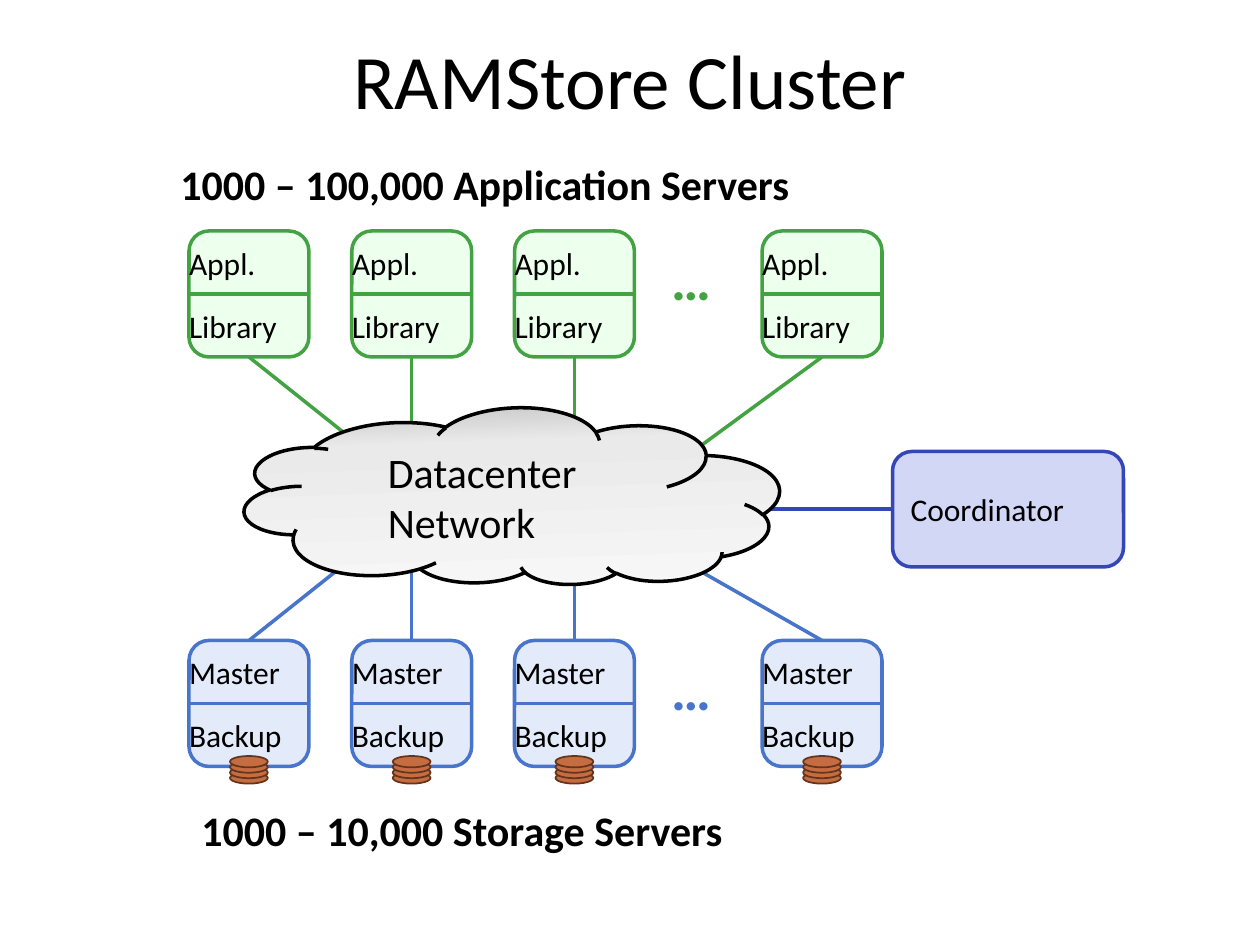
"""Build a slide showing a storage cluster joined by a datacenter network."""
from copy import deepcopy
from dataclasses import dataclass

from lxml import etree
from pptx import Presentation
from pptx.dml.color import RGBColor
from pptx.enum.shapes import MSO_CONNECTOR, MSO_SHAPE
from pptx.enum.text import MSO_ANCHOR, MSO_AUTO_SIZE, PP_ALIGN
from pptx.oxml.ns import qn
from pptx.util import Pt

ROUNDED, OVAL, CLOUD = MSO_SHAPE.ROUNDED_RECTANGLE, MSO_SHAPE.OVAL, MSO_SHAPE.CLOUD
STRAIGHT = MSO_CONNECTOR.STRAIGHT
MIDDLE, LEFT, CENTER = MSO_ANCHOR.MIDDLE, PP_ALIGN.LEFT, PP_ALIGN.CENTER
GROW = MSO_AUTO_SIZE.SHAPE_TO_FIT_TEXT
TOP_SIDE, LEFT_SIDE, BOTTOM_SIDE = 0, 1, 2

COLORS = {
    "text": "000000",
    "app_fill": "EDFFED", "app_line": "43A343",
    "storage_fill": "E3EAF9", "storage_line": "4974CB",
    "coordinator_fill": "D2D7F6", "coordinator_line": "3447B8",
    "disk_fill": "C56D41", "disk_line": "64351E",
    "cloud_bottom": "F8F8F8", "cloud_middle": "EAEAEA", "cloud_top": "C0C0C0",
}
FONT = "Calibri"
SERVER_LEFTS = [108 + 93 * column for column in range(3)] + [435.5]
SERVER_WIDTH, SERVER_HEIGHT = 68.5, 72
DISK_WIDTH, DISK_HEIGHT, DISK_STEP, DISK_COUNT = 21.6, 6.5, 3.1, 4


@dataclass(frozen=True)
class Box:
    left: float
    top: float
    width: float
    height: float

    def lengths(self) -> tuple:
        return Pt(self.left), Pt(self.top), Pt(self.width), Pt(self.height)


@dataclass(frozen=True)
class ServerRow:
    palette: str
    labels: tuple
    top: float
    side: int
    network_ends: tuple
    has_disks: bool


SERVER_ROWS = (
    ServerRow("app", ("Appl.", "Library"), 132, BOTTOM_SIDE,
              ((201.6, 251.3), (235.25, 246), (328.25, 246), (396, 258)), False),
    ServerRow("storage", ("Master", "Backup"), 366, TOP_SIDE,
              ((195, 324), (235.25, 324), (328.25, 330), (396, 324)), True),
)


def color(name: str) -> RGBColor:
    return RGBColor.from_string(COLORS[name])


def format_text(frame, size: float, ink: str = "text", bold: bool = False, align=LEFT) -> None:
    for paragraph in frame.paragraphs:
        paragraph.alignment = align
        paragraph.font.name = FONT
        paragraph.font.size = Pt(size)
        paragraph.font.bold = bold
        paragraph.font.color.rgb = color(ink)


def add_label(shapes, box: Box, text: str, size: float, ink: str = "text",
              bold: bool = False, wrap: bool = True, tight: bool = False) -> None:
    frame = shapes.add_textbox(*box.lengths()).text_frame
    frame.text = text
    frame.word_wrap = wrap
    frame.auto_size = GROW
    if tight:
        frame.margin_left = frame.margin_top = frame.margin_right = frame.margin_bottom = 0
    format_text(frame, size, ink, bold)


def add_outlined(shapes, kind, box: Box, palette: str, line_width: float = 2):
    outlined = shapes.add_shape(kind, *box.lengths())
    outlined.shadow.inherit = False
    outlined.fill.solid()
    outlined.fill.fore_color.rgb = color(f"{palette}_fill")
    outlined.line.color.rgb = color(f"{palette}_line")
    outlined.line.width = Pt(line_width)
    return outlined


def add_line(shapes, start: tuple, end: tuple, ink: str):
    line = shapes.add_connector(STRAIGHT, *(Pt(value) for value in start + end))
    line.line.color.rgb = color(ink)
    line.line.width = Pt(2)
    etree.SubElement(line._element.spPr, qn("a:effectLst"))
    return line


def add_server(slide, row: ServerRow, left: float):
    shapes = slide.shapes.add_group_shape().shapes
    body = add_outlined(shapes, ROUNDED, Box(left, row.top, SERVER_WIDTH, SERVER_HEIGHT), row.palette)
    half = SERVER_HEIGHT / 2
    for index, label in enumerate(row.labels):
        add_label(shapes, Box(left, row.top + 7.2 + index * half, SERVER_WIDTH, 21.6),
                  label, 18, tight=True)
    add_line(shapes, (left, row.top + half), (left + SERVER_WIDTH, row.top + half),
             f"{row.palette}_line")
    if row.has_disks:
        disk_left = left + (SERVER_WIDTH - DISK_WIDTH) / 2
        for level in reversed(range(DISK_COUNT)):
            disk_top = row.top + 66 + level * DISK_STEP
            add_outlined(shapes, OVAL, Box(disk_left, disk_top, DISK_WIDTH, DISK_HEIGHT), "disk", 1)
    return body


def add_server_row(slide, row: ServerRow) -> None:
    ink = f"{row.palette}_line"
    for left, network_end in zip(SERVER_LEFTS, row.network_ends):
        server = add_server(slide, row, left)
        link = add_line(slide.shapes, network_end, network_end, ink)
        link.begin_connect(server, row.side)
    add_label(slide.shapes, Box(376.5, row.top + 4.2, 46.8, 46), "…", 32, ink, bold=True, wrap=False)


def add_coordinator(slide) -> None:
    coordinator = add_outlined(slide.shapes, ROUNDED, Box(510, 258, 132, 66), "coordinator")
    frame = coordinator.text_frame
    frame.text = "Coordinator"
    frame.vertical_anchor = MIDDLE
    format_text(frame, 18)
    link = add_line(slide.shapes, (510, 291), (433, 291), "coordinator_line")
    link.begin_connect(coordinator, LEFT_SIDE)


def add_network(slide) -> None:
    cloud = slide.shapes.add_shape(CLOUD, *Box(139.5, 233.5, 306, 102).lengths())
    cloud.shadow.inherit = False
    cloud.rotation = 358
    cloud._element.spPr.find(qn("a:xfrm")).set("flipV", "1")
    cloud.line.color.rgb = color("text")
    cloud.line.width = Pt(2)
    cloud.fill.gradient()
    cloud.fill.gradient_angle = 270
    stop_list = cloud._element.spPr.find(".//" + qn("a:gsLst"))
    stop_list.append(deepcopy(stop_list[0]))
    shades = ((0, "cloud_bottom"), (0.76, "cloud_middle"), (1, "cloud_top"))
    for stop, (position, shade) in zip(cloud.fill.gradient_stops, shades):
        stop.position = position
        stop.color.rgb = color(shade)
    add_label(slide.shapes, Box(214.5, 251.5, 162, 65.5), "Datacenter\vNetwork", 24)


def add_title(slide) -> None:
    title = slide.shapes.title
    title.left, title.top, title.width, title.height = Box(36, 0, 648, 90).lengths()
    title.text_frame.text = "RAMStore Cluster"
    title.text_frame.vertical_anchor = MIDDLE
    format_text(title.text_frame, 44, align=CENTER)


def main() -> None:
    deck = Presentation()
    deck.slide_width, deck.slide_height = Pt(720), Pt(540)
    slide = deck.slides.add_slide(deck.slide_layouts[5])
    add_title(slide)
    for row in SERVER_ROWS:
        add_server_row(slide, row)
    add_coordinator(slide)
    add_network(slide)
    add_label(slide.shapes, Box(108, 456, 396, 36), "1000 – 10,000 Storage Servers", 24, bold=True)
    add_label(slide.shapes, Box(96, 87, 420, 36), "1000 – 100,000 Application Servers", 24, bold=True)
    deck.save("out.pptx")


if __name__ == "__main__":
    main()
